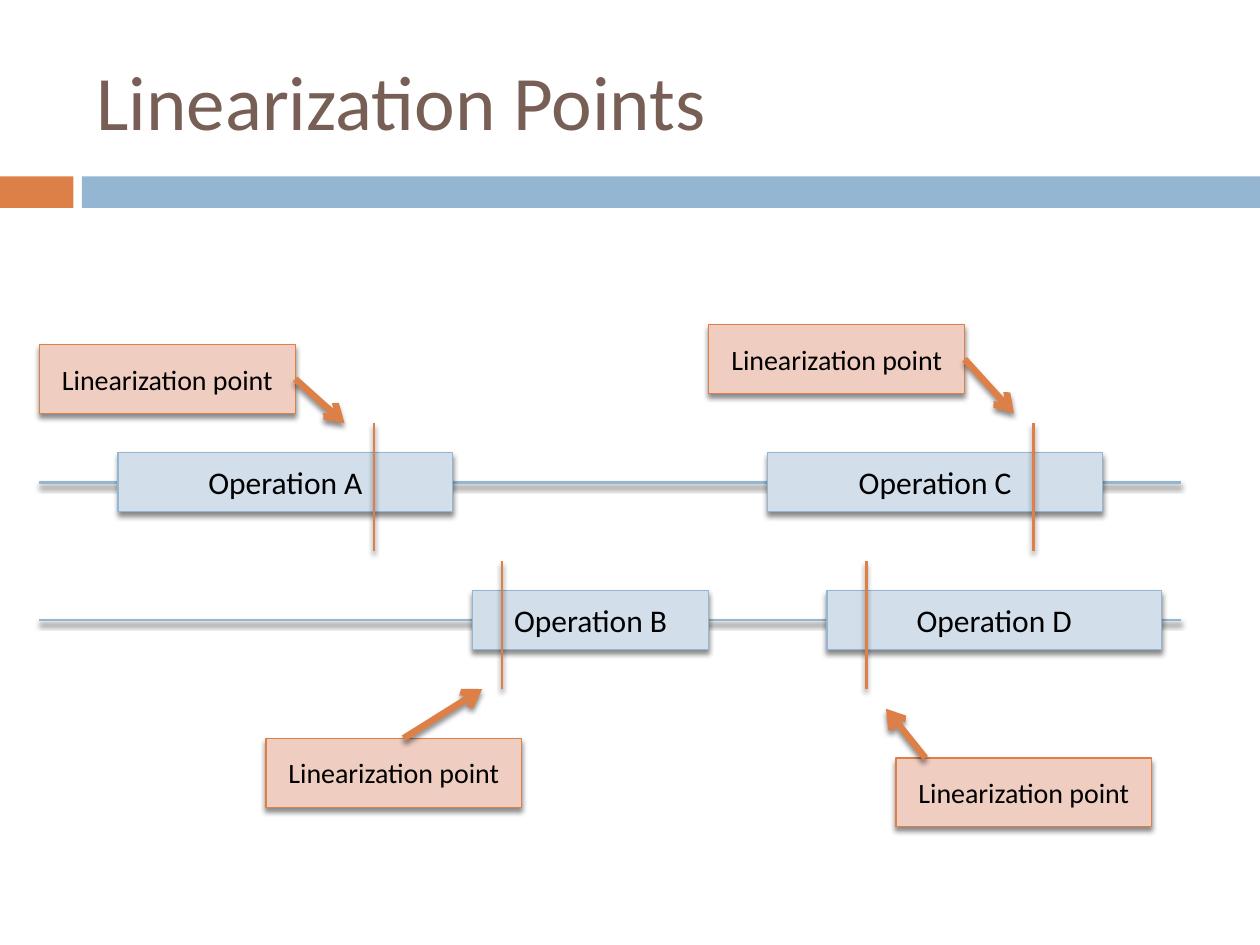
from lxml.etree import SubElement
from pptx import Presentation
from pptx.dml.color import RGBColor
from pptx.enum.shapes import MSO_CONNECTOR, MSO_SHAPE
from pptx.enum.text import MSO_ANCHOR, PP_ALIGN
from pptx.oxml.ns import qn
from pptx.util import Pt

ORANGE = RGBColor(0xDD, 0x80, 0x47)
BLUE = RGBColor(0x94, 0xB6, 0xD2)
PALE_ORANGE = RGBColor(0xEF, 0xCD, 0xC1)
PALE_BLUE = RGBColor(0xD2, 0xDE, 0xEA)
BROWN = RGBColor(0x77, 0x5F, 0x55)
BLACK = RGBColor(0, 0, 0)

FONT = "Calibri"
TIMELINE_LEFT, TIMELINE_RIGHT = 22.5, 675
UPPER, LOWER = 275.6, 354.4
OPERATION_HEIGHT = 33.75
MARKER_ABOVE, MARKER_BELOW = 33.75, 39.4
CALLOUT_WIDTH, CALLOUT_HEIGHT = 146.25, 39.4
RIGHT_SIDE = 3

# name, left, width, timeline, marker x
OPERATIONS = [
    ("Operation A", 67.5, 191.25, UPPER, 213.75),
    ("Operation C", 438.75, 191.25, UPPER, 590.6),
    ("Operation B", 270, 135, LOWER, 286.9),
    ("Operation D", 472.5, 191.25, LOWER, 495),
]

# callout left and top, arrow start (None: middle of the right side), arrow tip
CALLOUTS = [
    (22.5, 196.9, None, (196.9, 241.9)),
    (405, 185.6, None, (579.4, 236.25)),
    (151.9, 421.9, (230.6, 421.9), (275.6, 393.75)),
    (511.9, 433.1, (528.75, 433.1), (506.25, 405)),
]


def add_shadow(shape):
    """Add a soft shadow that falls straight down; call after fill and line are set."""
    effects = SubElement(shape._element.spPr, qn("a:effectLst"))
    shadow = SubElement(effects, qn("a:outerShdw"), blurRad=str(Pt(3)),
                        dist=str(Pt(2.4)), dir="5400000", rotWithShape="0")
    color = SubElement(shadow, qn("a:srgbClr"), val=str(BLACK))
    SubElement(color, qn("a:alpha"), val="45000")


def write_text(shape, text, *, size, color=BLACK, align=PP_ALIGN.CENTER):
    frame = shape.text_frame
    frame.word_wrap = True
    frame.vertical_anchor = MSO_ANCHOR.MIDDLE
    paragraph = frame.paragraphs[0]
    paragraph.alignment = align
    run = paragraph.add_run()
    run.text = text
    run.font.name = FONT
    run.font.size = Pt(size)
    run.font.color.rgb = color


def add_bar(slide, left, width, color):
    bar = slide.shapes.add_shape(MSO_SHAPE.RECTANGLE, Pt(left), Pt(100.8), Pt(width), Pt(18))
    bar.shadow.inherit = False
    bar.fill.solid()
    bar.fill.fore_color.rgb = color
    bar.line.fill.background()


def add_box(slide, text, left, top, width, height, *, fill, line, size):
    box = slide.shapes.add_shape(MSO_SHAPE.RECTANGLE, Pt(left), Pt(top), Pt(width), Pt(height))
    box.fill.solid()
    box.fill.fore_color.rgb = fill
    box.line.color.rgb = line
    box.line.width = Pt(0.79)
    add_shadow(box)
    write_text(box, text, size=size)
    return box


def add_line(slide, start, end, color, width=1.5, arrow=False):
    line = slide.shapes.add_connector(MSO_CONNECTOR.STRAIGHT, *map(Pt, start + end))
    line.line.color.rgb = color
    line.line.width = Pt(width)
    if arrow:
        SubElement(line.line._get_or_add_ln(), qn("a:tailEnd"), type="arrow")
    add_shadow(line)
    return line


def add_title(slide, text):
    title = slide.shapes.title
    title.left, title.top, title.width, title.height = Pt(48), Pt(18), Pt(642), Pt(78)
    write_text(title, text, size=44, color=BROWN, align=PP_ALIGN.LEFT)


def add_callout(slide, left, top, start, tip):
    box = add_box(slide, "Linearization point", left, top, CALLOUT_WIDTH, CALLOUT_HEIGHT,
                  fill=PALE_ORANGE, line=ORANGE, size=16)
    side_middle = (left + CALLOUT_WIDTH, top + CALLOUT_HEIGHT / 2)
    arrow = add_line(slide, start or side_middle, tip, ORANGE, width=3.75, arrow=True)
    if start is None:
        arrow.begin_connect(box, RIGHT_SIDE)


def main():
    presentation = Presentation()
    presentation.slide_width, presentation.slide_height = Pt(720), Pt(540)
    slide = presentation.slides.add_slide(presentation.slide_layouts[5])

    add_title(slide, "Linearization Points")
    add_bar(slide, 0, 42, ORANGE)
    add_bar(slide, 46.8, 673.2, BLUE)

    for y in (UPPER, LOWER):
        add_line(slide, (TIMELINE_LEFT, y), (TIMELINE_RIGHT, y), BLUE)
    for name, left, width, y, marker in OPERATIONS:
        add_box(slide, name, left, y - OPERATION_HEIGHT / 2, width, OPERATION_HEIGHT,
                fill=PALE_BLUE, line=BLUE, size=18)
        add_line(slide, (marker, y - MARKER_ABOVE), (marker, y + MARKER_BELOW), ORANGE)
    for callout in CALLOUTS:
        add_callout(slide, *callout)

    presentation.save("out.pptx")


if __name__ == "__main__":
    main()
